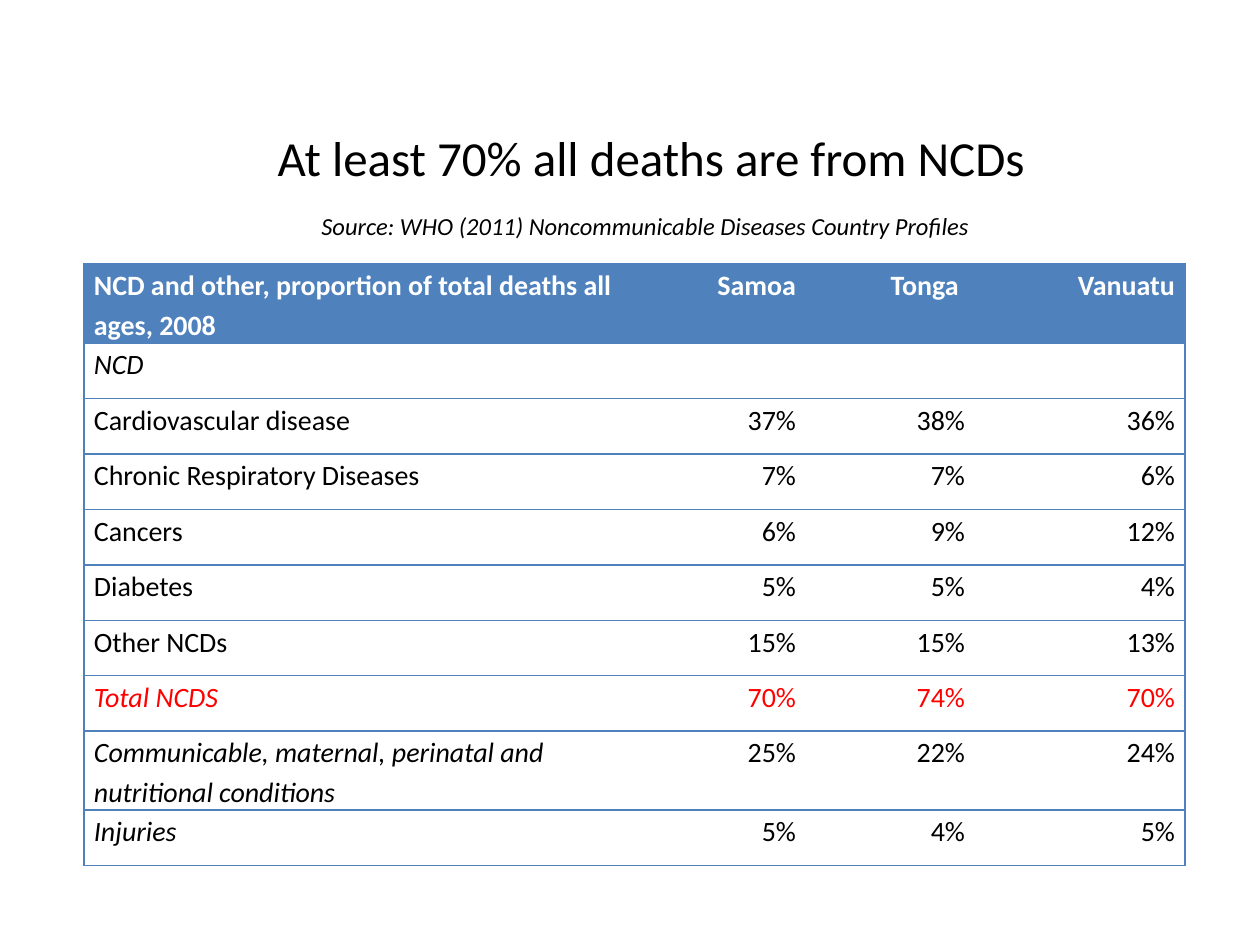
from dataclasses import dataclass

from lxml import etree
from pptx import Presentation
from pptx.dml.color import RGBColor
from pptx.enum import text
from pptx.oxml import ns
from pptx.util import Pt


@dataclass(frozen=True)
class Theme:
    font: str = "Calibri"
    ink: str = "000000"
    accent: str = "4F81BD"
    on_accent: str = "FFFFFF"
    alert: str = "FF0000"
    title_size: int = 28
    source_size: int = 14
    table_size: int = 16
    line_spacing: float = 1.15
    border_width: int = 1


THEME = Theme()
PX_PER_INCH = 126
SLIDE_SIZE = (1260, 945)
TITLE_BOX = (84, 107, 1134, 158)
TABLE_BOX = (84, 264, 1101, 602)

COLUMN_WIDTHS = (553, 169, 169, 210)
TALL_ROW = 79
CELL_INSET = 10

HEADER = ("NCD and other, proportion of total deaths all ages, 2008",
          "Samoa", "Tonga ", "Vanuatu")
DEATHS = (
    ("NCD", "", "", ""),
    ("Cardiovascular disease", "37%", "38%", "36%"),
    ("Chronic Respiratory Diseases", "7%", "7%", "6%"),
    ("Cancers", "6%", "9%", "12%"),
    ("Diabetes", "5%", "5%", "4%"),
    ("Other NCDs", "15%", "15%", "13%"),
    ("Total NCDS", "70%", "74%", "70%"),
    ("Communicable, maternal, perinatal and nutritional conditions",
     "25%", "22%", "24%"),
    ("Injuries", "5%", "4%", "5%"),
)
GROUP_LABELS = {"NCD", "Total NCDS", DEATHS[7][0], "Injuries"}
TALL_LABELS = {HEADER[0], DEATHS[7][0]}


def px(length):
    return round(length * 914400 / PX_PER_INCH)


def set_attrs(obj, values):
    for name, value in values.items():
        setattr(obj, name, value)


def add_run(p, content, size, color, **style):
    r = p.add_run()
    r.text = content
    set_attrs(r.font, {"name": THEME.font, "size": Pt(size), **style})
    r.font.color.rgb = RGBColor.from_string(color)


def add_title(s, box):
    """Title with its source on a second line."""
    tf = s.shapes.add_textbox(*map(px, box)).text_frame
    set_attrs(tf, {"word_wrap": True, "vertical_anchor": text.MSO_ANCHOR.MIDDLE})
    p = tf.paragraphs[0]
    p.alignment = text.PP_ALIGN.CENTER
    add_run(p, "At least 70% all deaths are from NCDs", THEME.title_size, THEME.ink)
    p.add_line_break()
    add_run(p, "Source: WHO (2011) Noncommunicable Diseases Country Profiles",
            THEME.source_size, THEME.ink, italic=True)
    # The closing space keeps the second line at title height
    add_run(p, " ", THEME.title_size, THEME.ink)


def set_borders(cell, visible):
    """Draw the visible sides (of L, R, T, B) and clear the rest."""
    tc_pr = cell._tc.get_or_add_tcPr()
    for i, side in enumerate("LRTB"):
        ln = etree.Element(ns.qn(f"a:ln{side}"), w=str(Pt(THEME.border_width)))
        if side in visible:
            fill = etree.SubElement(ln, ns.qn("a:solidFill"))
            etree.SubElement(fill, ns.qn("a:srgbClr"), val=THEME.accent)
        else:
            etree.SubElement(ln, ns.qn("a:noFill"))
        tc_pr.insert(i, ln)


def fill_cell(cell, content, is_label, is_header, color, italic):
    set_attrs(cell, {"margin_left": px(CELL_INSET), "margin_right": px(CELL_INSET),
                     "margin_top": 0, "margin_bottom": 0})
    if is_header:
        cell.fill.solid()
        cell.fill.fore_color.rgb = RGBColor.from_string(THEME.accent)
    else:
        cell.fill.background()
    p = cell.text_frame.paragraphs[0]
    align = text.PP_ALIGN.LEFT if is_label else text.PP_ALIGN.RIGHT
    set_attrs(p, {"alignment": align, "line_spacing": THEME.line_spacing})
    if content:
        add_run(p, content, THEME.table_size, color, bold=is_header, italic=italic)


def add_deaths_table(s, box):
    """Share of deaths by cause, one column per country."""
    rows = (HEADER, *DEATHS)
    table = s.shapes.add_table(len(rows), len(HEADER), *map(px, box)).table
    table.horz_banding = False
    for column, width in zip(table.columns, COLUMN_WIDTHS):
        column.width = px(width)

    # Rows with one line share the height that the tall rows leave
    tall_count = len(TALL_LABELS)
    short_row = (box[3] - tall_count * TALL_ROW) / (len(rows) - tall_count)
    last = len(HEADER) - 1
    for i, values in enumerate(rows):
        label = values[0]
        table.rows[i].height = px(TALL_ROW if label in TALL_LABELS else short_row)
        is_header = i == 0
        color = (THEME.on_accent if is_header
                 else THEME.alert if label == "Total NCDS" else THEME.ink)
        for j, value in enumerate(values):
            cell = table.cell(i, j)
            fill_cell(cell, value, j == 0, is_header, color,
                      j == 0 and label in GROUP_LABELS)
            set_borders(cell, "TB" + {0: "L", last: "R"}.get(j, ""))


def main():
    prs = Presentation()
    prs.slide_width, prs.slide_height = map(px, SLIDE_SIZE)
    s = prs.slides.add_slide(prs.slide_layouts[6])
    add_title(s, TITLE_BOX)
    add_deaths_table(s, TABLE_BOX)
    prs.save("out.pptx")


if __name__ == "__main__":
    main()
